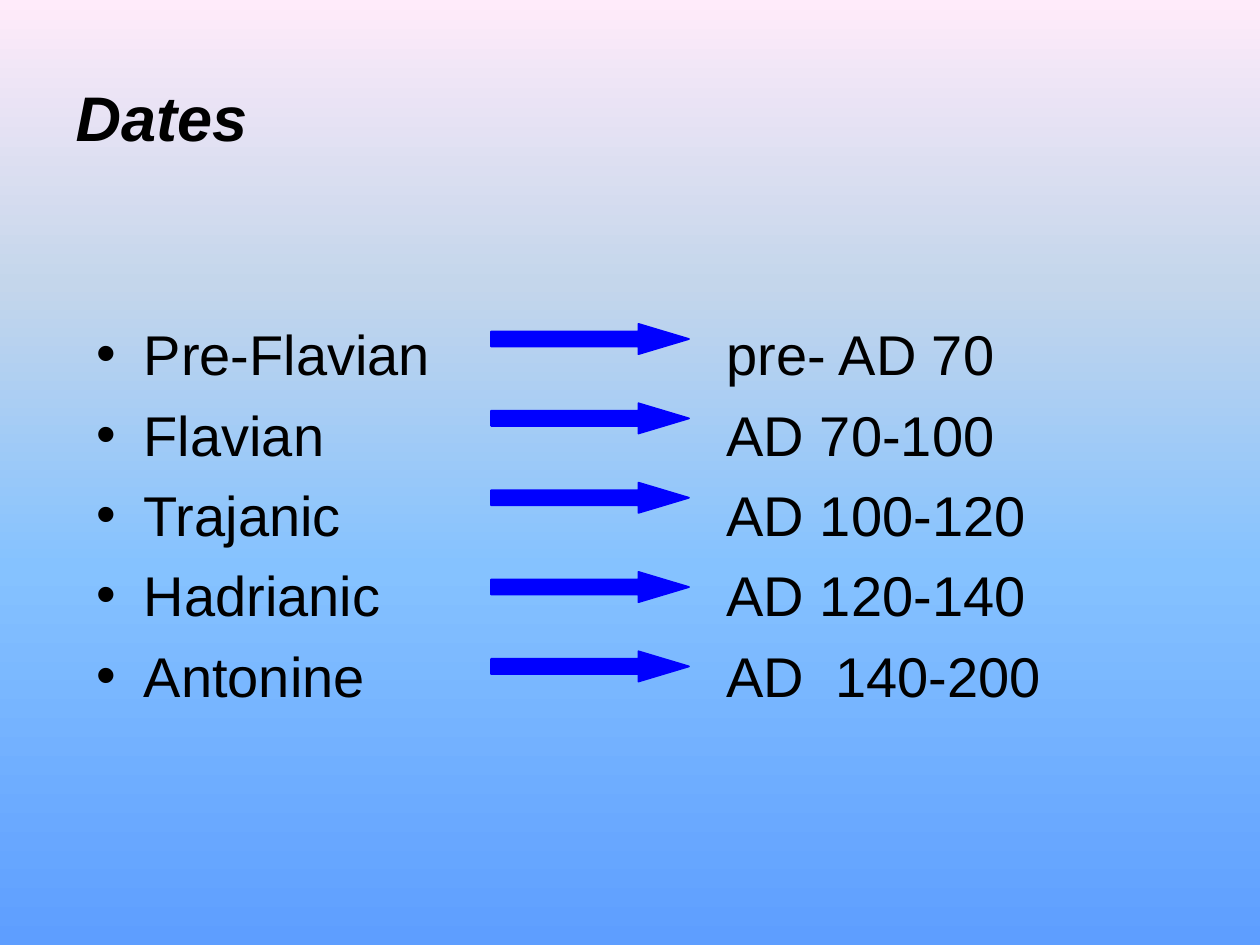
from lxml import etree
from pptx import Presentation
from pptx import util as u
from pptx.dml.color import RGBColor
from pptx.enum import shapes, text
from pptx.oxml.ns import qn

COLORS = {"text": "000000", "arrow": "0000FF"}
SKY = [(0, "FFEBFA"), (30, "C4D6EB"), (60, "85C2FF"), (100, "5E9EFF")]
PERIODS = [
    ("Pre-Flavian", "pre- AD 70"),
    ("Flavian", "AD 70-100"),
    ("Trajanic", "AD 100-120"),
    ("Hadrianic", "AD 120-140"),
    ("Antonine", "AD  140-200"),
]
# The last two arrows sit slightly lower than the even step
ARROW_TOPS = [6.53 + 1.6 * i + (0.2 if i > 2 else 0) for i in range(len(PERIODS))]


def write(p, words, size=32, bold=False, italic=False, color="text", font="Arial"):
    p.alignment = text.PP_ALIGN.LEFT
    r = p.add_run()
    r.text = words
    r.font.name, r.font.size = font, u.Pt(size)
    r.font.bold, r.font.italic = bold, italic
    r.font.color.rgb = RGBColor.from_string(COLORS[color])


def place(sp, left, top, width, height):
    sp.left, sp.top = u.Cm(left), u.Cm(top)
    sp.width, sp.height = u.Cm(width), u.Cm(height)


class Deck:
    indent = u.Cm(0.95)
    date_tab = u.Cm(12.7)

    def __init__(self, prs):
        self.s = prs.slides.add_slide(prs.slide_layouts[5])

    def background(self, stops):
        fill = self.s.background.fill
        fill.gradient()
        fill.gradient_angle = 270
        gs_list = self.s.element.find(".//" + qn("a:gsLst"))
        for gs in list(gs_list):
            gs_list.remove(gs)
        for pos, color in stops:
            gs = etree.SubElement(gs_list, qn("a:gs"), pos=str(pos * 1000))
            etree.SubElement(gs, qn("a:srgbClr"), val=color)

    def title(self, words, *box):
        sp = self.s.shapes.title
        place(sp, *box)
        sp.text_frame.vertical_anchor = text.MSO_ANCHOR.MIDDLE
        write(sp.text_frame.paragraphs[0], words, size=36, bold=True, italic=True)

    def bullets(self, rows, *box):
        sp = self.s.shapes.add_textbox(*map(u.Cm, box))
        tf = sp.text_frame
        tf.word_wrap = True
        for i, row in enumerate(rows):
            p = tf.add_paragraph() if i else tf.paragraphs[0]
            p.space_before = u.Pt(7.5)
            write(p, "\t".join(row))
            self.bullet_format(p)

    def bullet_format(self, p):
        pPr = p._p.get_or_add_pPr()
        pPr.set("marL", str(self.indent))
        pPr.set("indent", str(-self.indent))
        etree.SubElement(pPr, qn("a:buFont"), typeface="Arial")
        etree.SubElement(pPr, qn("a:buChar"), char="•")
        tabs = etree.SubElement(pPr, qn("a:tabLst"))
        etree.SubElement(tabs, qn("a:tab"), pos=str(self.date_tab), algn="l")

    def arrow(self, *box):
        sp = self.s.shapes.add_shape(shapes.MSO_SHAPE.RIGHT_ARROW, *map(u.Cm, box))
        sp.shadow.inherit = False
        sp.adjustments[0], sp.adjustments[1] = 0.5, 1.67
        color = RGBColor.from_string(COLORS["arrow"])
        sp.fill.solid()
        sp.fill.fore_color.rgb = color
        sp.line.color.rgb = color
        sp.line.width = u.Pt(1)


def main():
    prs = Presentation()
    prs.slide_width, prs.slide_height = u.Cm(25.4), u.Cm(19.05)
    deck = Deck(prs)
    deck.background(SKY)

    # Heading
    deck.title("Dates", 1.27, 0.76, 22.86, 3.18)

    # Periods and their dates
    deck.bullets(PERIODS, 1.7, 6.32, 22.86, 9.4)

    # Arrows from period to date
    for top in ARROW_TOPS:
        deck.arrow(9.9, top, 3.99, 0.61)

    prs.save("out.pptx")


if __name__ == "__main__":
    main()
